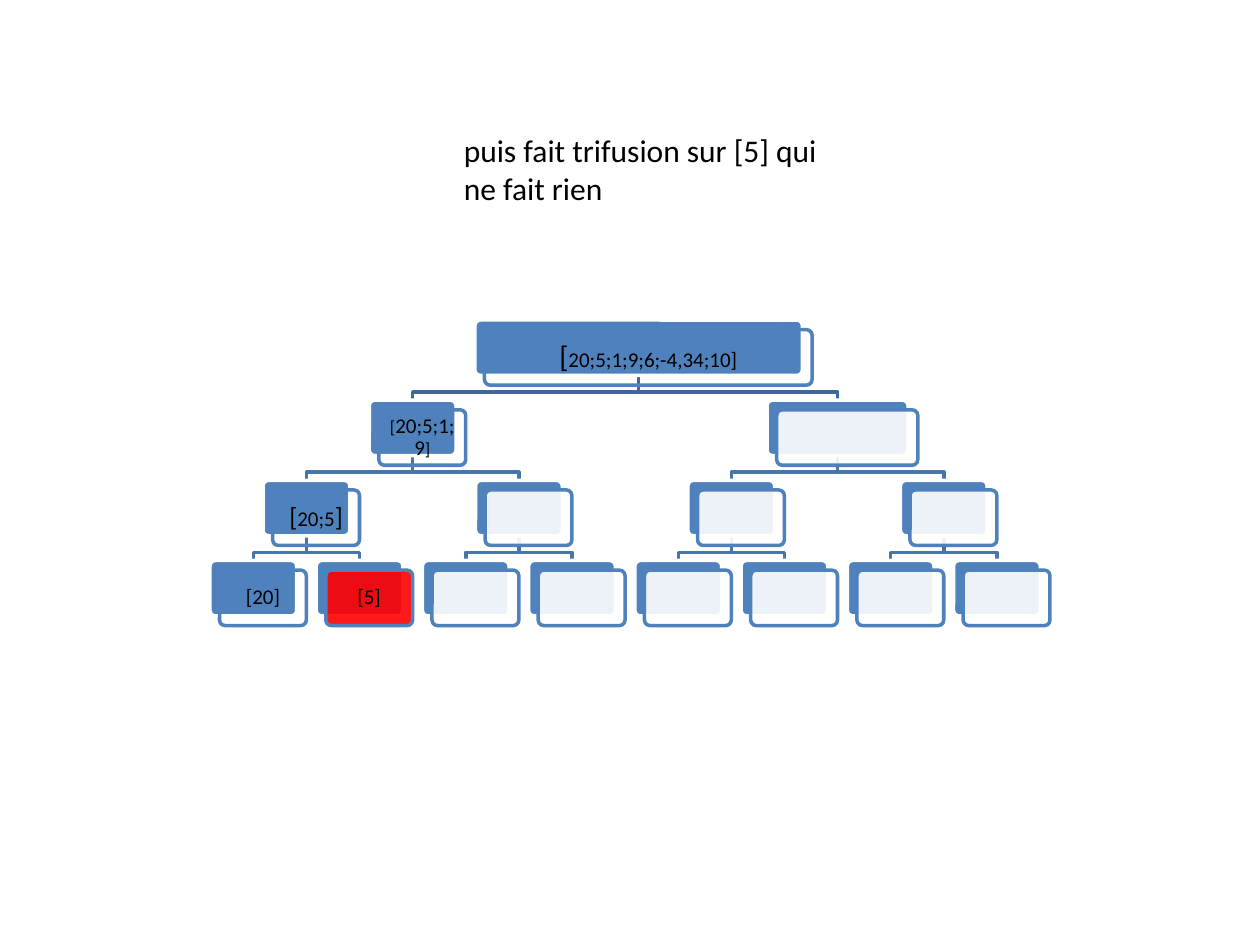
from dataclasses import dataclass

from lxml import etree
from pptx import Presentation
from pptx.dml.color import RGBColor
from pptx.enum.shapes import MSO_SHAPE
from pptx.enum.text import MSO_ANCHOR, MSO_AUTO_SIZE, PP_ALIGN
from pptx.oxml.ns import qn
from pptx.util import Pt

ROUNDED = MSO_SHAPE.ROUNDED_RECTANGLE
MIDDLE, TOP = MSO_ANCHOR.MIDDLE, MSO_ANCHOR.TOP
CENTER, LEFT = PP_ALIGN.CENTER, PP_ALIGN.LEFT
FIT_SHAPE = MSO_AUTO_SIZE.SHAPE_TO_FIT_TEXT

TITLE_ONLY = 5
TREE_TOP = 182.9
FIRST_LEAF = 144.8
LEAF_PITCH = 60.7
LEVEL_STEP = 45.8
CARD_WIDTH = 49.6
CARD_HEIGHT = 31.7
CARD_OFFSET = 5.5
LABEL_INSET = 0.9
BUS_RISE = 4.7


@dataclass(frozen=True)
class Theme:
    font: str = "Calibri"
    text: str = "000000"
    card: str = "4F81BD"
    edge: str = "FFFFFF"
    empty: str = "FFFFFF"
    active: str = "FF0000"
    root_link: str = "3F6797"
    link: str = "4875AC"
    opacity: int = 90000
    line: float = 2
    title: float = 18
    label: float = 12
    root_bracket: float = 17
    half_bracket: float = 10
    quarter_bracket: float = 15


class Node:
    def __init__(self, *children, leaf=0, width=CARD_WIDTH, label=(), margin=3.6, fill=None):
        self.children = children
        self.width = width
        self.label = label
        self.margin = margin
        self.fill = fill
        if children:
            first, last = children[0], children[-1]
            self.center = (first.left + last.left + last.width) / 2
        else:
            self.center = FIRST_LEAF + leaf * LEAF_PITCH
        self.left = self.center - width / 2


class TreeSlide:
    def __init__(self, slide, theme):
        self.slide = slide
        self.theme = theme
        self.diagram = slide.shapes.add_group_shape().shapes

    def title(self, wording, left, top, width, height):
        heading = self.slide.shapes.title
        heading.left, heading.top = Pt(left), Pt(top)
        heading.width, heading.height = Pt(width), Pt(height)
        frame = heading.text_frame
        frame.text = wording
        frame.word_wrap = True
        frame.auto_size = FIT_SHAPE
        frame.vertical_anchor = TOP
        paragraph = frame.paragraphs[0]
        paragraph.alignment = LEFT
        self.style_text(paragraph)
        paragraph.font.size = Pt(self.theme.title)

    def style_text(self, paragraph):
        paragraph.font.name = self.theme.font
        paragraph.font.color.rgb = RGBColor.from_string(self.theme.text)

    def outline(self, shape, color):
        shape.shadow.inherit = False
        shape.line.color.rgb = RGBColor.from_string(color)
        shape.line.width = Pt(self.theme.line)

    def link(self, parent, child, top, color):
        child_top = top + LEVEL_STEP
        bus = child_top - BUS_RISE
        route = [(parent.center, bus), (child.center, bus), (child.center, child_top)]
        builder = self.diagram.build_freeform(Pt(parent.center), Pt(top + CARD_HEIGHT))
        builder.add_line_segments([(Pt(x), Pt(y)) for x, y in route], close=False)
        elbow = builder.convert_to_shape()
        elbow.fill.background()
        self.outline(elbow, color)

    def card(self, left, top, width, edge, fill=None, opacity=None):
        card = self.diagram.add_shape(ROUNDED, Pt(left), Pt(top), Pt(width), Pt(CARD_HEIGHT))
        card.adjustments[0] = 0.1
        if fill:
            card.fill.solid()
            card.fill.fore_color.rgb = RGBColor.from_string(fill)
        else:
            card.fill.background()
        if opacity:
            color = card.element.spPr.find(f"{qn('a:solidFill')}/{qn('a:srgbClr')}")
            etree.SubElement(color, qn("a:alpha"), val=str(opacity))
        self.outline(card, edge)

    def label(self, node, left, top):
        box = self.diagram.add_textbox(
            Pt(left + LABEL_INSET), Pt(top + LABEL_INSET),
            Pt(node.width - 2 * LABEL_INSET), Pt(CARD_HEIGHT - 2 * LABEL_INSET))
        frame = box.text_frame
        frame.word_wrap = True
        frame.vertical_anchor = MIDDLE
        frame.margin_left = frame.margin_right = Pt(node.margin)
        frame.margin_top = frame.margin_bottom = Pt(node.margin)
        paragraph = frame.paragraphs[0]
        paragraph.alignment = CENTER
        paragraph.line_spacing = 0.9
        self.style_text(paragraph)
        for wording, size in node.label:
            run = paragraph.add_run()
            run.text = wording
            run.font.size = Pt(size)

    def links(self, node, top=TREE_TOP):
        color = self.theme.root_link if top == TREE_TOP else self.theme.link
        for child in node.children:
            self.links(child, top + LEVEL_STEP)
            self.link(node, child, top, color)

    def cards(self, node, top=TREE_TOP):
        theme = self.theme
        self.card(node.left, top, node.width, theme.edge, theme.card)
        left, front_top = node.left + CARD_OFFSET, top + CARD_OFFSET
        self.card(left, front_top, node.width, theme.card, node.fill,
                  theme.opacity if node.fill else None)
        if node.label:
            self.label(node, left, front_top)
        for child in node.children:
            self.cards(child, top + LEVEL_STEP)


def sorting_tree(theme):
    size = theme.label
    leaves = [
        Node(leaf=0, label=[("[20]", size)]),
        Node(leaf=1, label=[("[5]", size)], fill=theme.active),
        *(Node(leaf=index, fill=theme.empty) for index in range(2, 8)),
    ]
    bracket = theme.quarter_bracket
    quarters = [
        Node(*leaves[:2], margin=4.2,
             label=[("[", bracket), ("20;5", size), ("]", bracket)]),
        *(Node(*leaves[index:index + 2], fill=theme.empty) for index in (2, 4, 6)),
    ]
    bracket = theme.half_bracket
    left_half = Node(*quarters[:2], margin=2.9,
                     label=[("[", bracket), ("20;5;1;9", size), ("]", bracket)])
    right_half = Node(*quarters[2:], width=80.6, fill=theme.empty)
    return Node(left_half, right_half, width=187.2, margin=5,
                label=[("[", theme.root_bracket), ("20;5;1;9;6;-4,34;10]", size)])


def main():
    presentation = Presentation()
    presentation.slide_width, presentation.slide_height = Pt(720), Pt(540)
    slide = presentation.slides.add_slide(presentation.slide_layouts[TITLE_ONLY])
    theme = Theme()
    tree_slide = TreeSlide(slide, theme)
    tree_slide.title("puis fait trifusion sur [5] qui ne fait rien", 257.8, 71.3, 232.6, 51)
    tree = sorting_tree(theme)
    tree_slide.links(tree)
    tree_slide.cards(tree)
    presentation.save("out.pptx")


if __name__ == "__main__":
    main()
